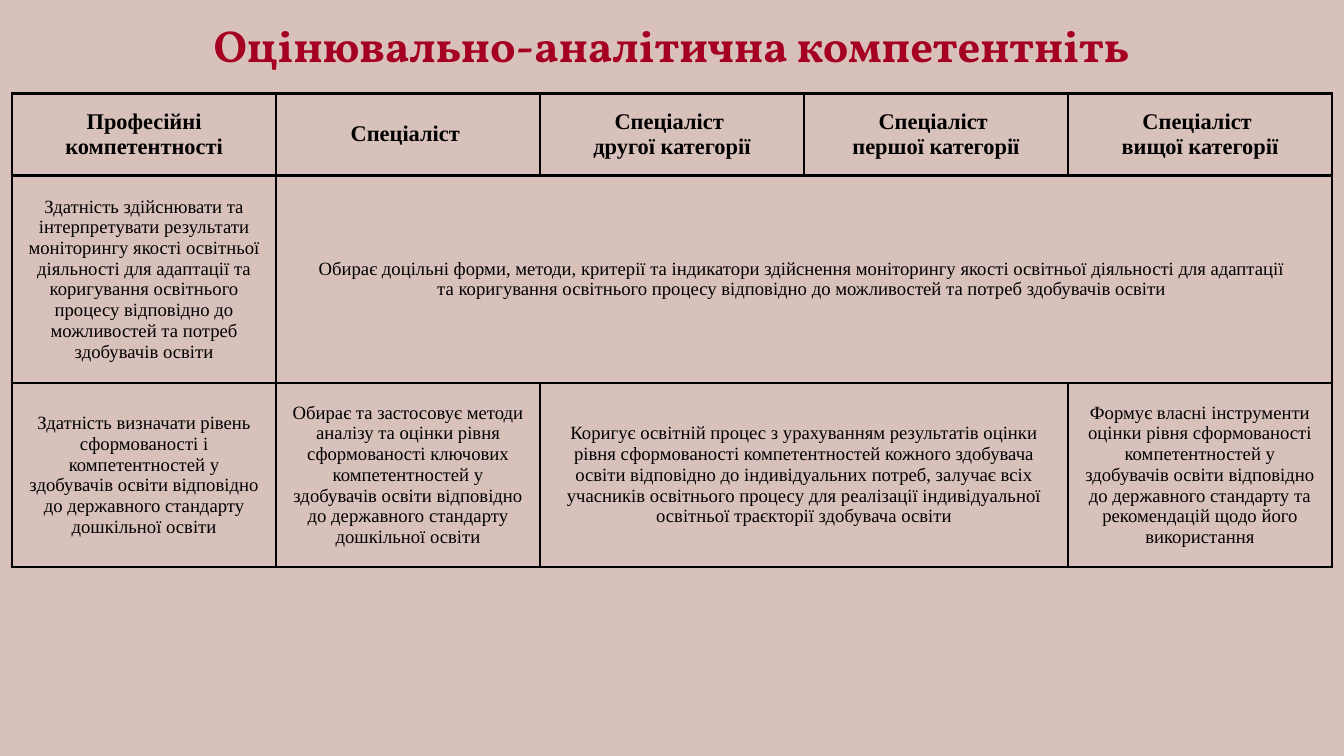
import pptx
import pptx.util
import pptx.dml.color
import pptx.enum.text
import pptx.oxml
import pptx.oxml.ns

Inches, Pt = pptx.util.Inches, pptx.util.Pt
RGBColor = pptx.dml.color.RGBColor
CENTER = pptx.enum.text.PP_ALIGN.CENTER

BACKGROUND = RGBColor(0xD9, 0xC1, 0xBB)
CRIMSON = RGBColor(0xA5, 0x00, 0x21)
BLACK = RGBColor(0x00, 0x00, 0x00)

COL_WIDTH = 3.928
ROW_HEIGHTS = [1.22, 3.09, 2.74]

# Each cell: column, number of columns it covers, paragraphs
ROWS = [
    [
        (0, 1, ["Професійні компетентності"]),
        (1, 1, ["Спеціаліст "]),
        (2, 1, ["Спеціаліст ", "другої категорії"]),
        (3, 1, ["Спеціаліст ", "першої категорії"]),
        (4, 1, ["Спеціаліст ", "вищої категорії"]),
    ],
    [
        (0, 1, ["Здатність здійснювати та інтерпретувати результати моніторингу якості "
                "освітньої діяльності для адаптації та коригування освітнього процесу "
                "відповідно до можливостей та потреб здобувачів освіти"]),
        (1, 4, ["Обирає доцільні форми, методи, критерії та індикатори здійснення "
                "моніторингу якості освітньої діяльності для адаптації ",
                "та коригування освітнього процесу відповідно до можливостей та потреб "
                "здобувачів освіти "]),
    ],
    [
        (0, 1, ["Здатність визначати рівень сформованості і компетентностей у здобувачів "
                "освіти відповідно до державного стандарту дошкільної освіти"]),
        (1, 1, ["Обирає та застосовує методи аналізу та оцінки рівня сформованості "
                "ключових компетентностей у здобувачів освіти відповідно до державного "
                "стандарту дошкільної освіти"]),
        (2, 2, ["Коригує освітній процес з урахуванням результатів оцінки рівня "
                "сформованості компетентностей кожного здобувача освіти відповідно до "
                "індивідуальних потреб, залучає всіх учасників освітнього процесу для "
                "реалізації індивідуальної освітньої траєкторії здобувача освіти"]),
        (4, 1, ["Формує власні інструменти оцінки рівня сформованості компетентностей у "
                "здобувачів освіти відповідно до державного стандарту та рекомендацій "
                "щодо його використання"]),
    ],
]


def add_run(p, text, font, size, color, bold):
    p.alignment = CENTER
    r = p.add_run()
    r.text = text
    r.font.name = font
    r.font.size = Pt(size)
    r.font.bold = bold
    r.font.color.rgb = color


def set_borders(cell, color, width):
    """Draw all four cell borders; they must precede the fill in tcPr."""
    tc_pr = cell._tc.get_or_add_tcPr()
    for i, side in enumerate(["lnL", "lnR", "lnT", "lnB"]):
        tc_pr.insert(i, pptx.oxml.parse_xml(
            f'<a:{side} {pptx.oxml.ns.nsdecls("a")} w="{Pt(width)}">'
            f'<a:solidFill><a:srgbClr val="{color}"/></a:solidFill></a:{side}>'))


prs = pptx.Presentation()
prs.slide_width = Inches(20)
prs.slide_height = Inches(11.25)
s = prs.slides.add_slide(prs.slide_layouts[6])
s.background.fill.solid()
s.background.fill.fore_color.rgb = BACKGROUND

# Competence table
table = s.shapes.add_table(3, 5, Inches(0.18), Inches(1.39),
                           Inches(5 * COL_WIDTH), Inches(sum(ROW_HEIGHTS))).table
table.first_row = False
table.horz_banding = False
for col in table.columns:
    col.width = Inches(COL_WIDTH)
for row, height in zip(table.rows, ROW_HEIGHTS):
    row.height = Inches(height)

for cell in table.iter_cells():
    cell.fill.background()
    set_borders(cell, BLACK, 3)
    cell.vertical_anchor = pptx.enum.text.MSO_ANCHOR.MIDDLE
    cell.margin_left = cell.margin_right = Inches(0.21)
    cell.margin_top = cell.margin_bottom = Inches(0.21)

for row_no, row_cells in enumerate(ROWS):
    is_header = row_no == 0
    for col_no, span, paragraphs in row_cells:
        cell = table.cell(row_no, col_no)
        if span > 1:
            cell.merge(table.cell(row_no, col_no + span - 1))
        tf = cell.text_frame
        for i, text in enumerate(paragraphs):
            p = tf.add_paragraph() if i else tf.paragraphs[0]
            add_run(p, text, "Times New Roman", 24 if is_header else 20, BLACK, is_header)

# Title
tf = s.shapes.add_textbox(Inches(1.12), Inches(0.18), Inches(17.75), Inches(0.89)).text_frame
tf.word_wrap = True
tf.auto_size = pptx.enum.text.MSO_AUTO_SIZE.SHAPE_TO_FIT_TEXT
tf.margin_left = tf.margin_right = tf.margin_top = tf.margin_bottom = 0
p = tf.paragraphs[0]
p.line_spacing = 1.1
add_run(p, "Оцінювально-аналітична компетентніть", "Vollkorn", 48, CRIMSON, True)

prs.save("out.pptx")
